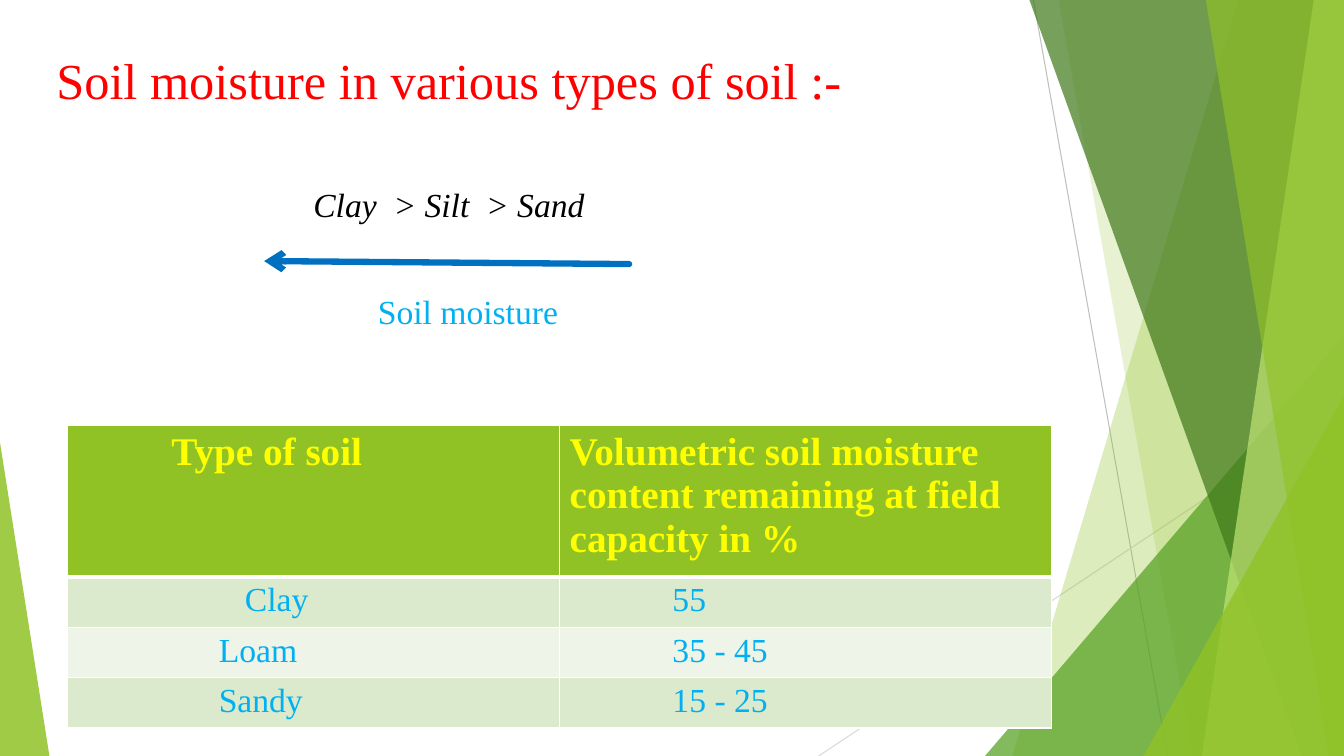
"""Build the slide on soil moisture in various types of soil."""
from lxml import etree
from pptx import Presentation
from pptx.dml.color import RGBColor
from pptx.enum.shapes import MSO_CONNECTOR
from pptx.oxml.ns import qn
from pptx.util import Inches, Pt

STRAIGHT = MSO_CONNECTOR.STRAIGHT
WHITE = RGBColor(0xFF, 0xFF, 0xFF)
BLACK = RGBColor(0, 0, 0)
RED = RGBColor(0xFF, 0, 0)
YELLOW = RGBColor(0xFF, 0xFF, 0)
SKY = RGBColor(0, 0xB0, 0xF0)
BLUE = RGBColor(0, 0x70, 0xC0)
LIME = RGBColor(0x90, 0xC2, 0x26)
PALE_LIME = RGBColor(0xC0, 0xE4, 0x74)
GREEN = RGBColor(0x54, 0xA0, 0x21)
DARK_GREEN = RGBColor(0x3F, 0x78, 0x19)
BAND_DARK = RGBColor(0xDB, 0xE9, 0xCD)
BAND_LIGHT = RGBColor(0xEE, 0xF4, 0xE8)
GREY = RGBColor(0xBF, 0xBF, 0xBF)
LIGHT_GREY = RGBColor(0xD9, 0xD9, 0xD9)

WIDTH, HEIGHT = 13.33, 7.5
FONT = "Times New Roman"

BACK_LINES = [
    ((10.25, 0), (11.58, HEIGHT), GREY, 0.75),
    ((WIDTH, 4.03), (8.12, HEIGHT), LIGHT_GREY, 0.75),
]
MOISTURE_ARROW = ((6.24, 2.62), (2.62, 2.59), BLUE, 4.5)

RIGHT_TOP, RIGHT_BOTTOM = (WIDTH, 0), (WIDTH, HEIGHT)
FACETS = [
    ([(12.28, 0), RIGHT_TOP, RIGHT_BOTTOM, (10.04, HEIGHT)], LIME, 30),
    ([(10.5, 0), RIGHT_TOP, RIGHT_BOTTOM, (11.83, HEIGHT)], LIME, 20),
    ([(WIDTH, 3.33), RIGHT_BOTTOM, (9.77, HEIGHT)], GREEN, 72),
    ([(10.21, 0), RIGHT_TOP, RIGHT_BOTTOM, (12.91, HEIGHT)], DARK_GREEN, 70),
    ([(13.03, 0), RIGHT_TOP, RIGHT_BOTTOM, (11.92, HEIGHT)], PALE_LIME, 70),
    ([(11.96, 0), RIGHT_TOP, RIGHT_BOTTOM, (13.18, HEIGHT)], LIME, 65),
    ([(WIDTH, 3.93), RIGHT_BOTTOM, (11.34, HEIGHT)], LIME, 80),
    ([(0, 4.39), (0.49, HEIGHT), (0, HEIGHT)], LIME, 85),
]

TEXTS = [
    ("Soil moisture in various types of soil :-", (0.46, 0.44, 9.78, 0.71),
     {"size": Pt(36)}, RED),
    ("Clay  > Silt  > Sand", (3.01, 1.78, 5.97, 0.5),
     {"size": Pt(24), "italic": True}, BLACK),
    ("Soil moisture", (3.65, 2.84, 2.9, 0.5), {"size": Pt(24)}, SKY),
]

SOIL_ROWS = [
    ("Type of soil", "Volumetric soil moisture content remaining at field capacity in %"),
    ("Clay", "55"),
    ("Loam", "35 - 45"),
    ("Sandy", "15 - 25"),
]
INDENTS = [(1.03, 0.1), (1.76, 1.12), (1.5, 1.12), (1.5, 1.12)]
TABLE_LEFT, TABLE_TOP, COLUMN_WIDTH = 0.67, 4.22, 4.88
HEADER_HEIGHT, ROW_HEIGHT = 1.48, 0.5
HEADER_FORMAT = {"size": Pt(28), "bold": True}
BODY_FORMAT = {"size": Pt(24), "bold": False}


def write(frame, text, values, color):
    paragraph = frame.paragraphs[0]
    run = paragraph.add_run()
    run.text = text
    for key, value in {"name": FONT, **values}.items():
        setattr(run.font, key, value)
    run.font.color.rgb = color


def draw_line(shapes, start, end, color, weight):
    line = shapes.add_connector(STRAIGHT, *map(Inches, start + end))
    line.line.color.rgb = color
    line.line.width = Pt(weight)
    etree.SubElement(line._element.spPr, qn("a:effectLst"))
    return line


def draw_facet(shapes, points, color, opacity):
    corners = [(Inches(x), Inches(y)) for x, y in points]
    builder = shapes.build_freeform(*corners[0], scale=1.0)
    builder.add_line_segments(corners[1:], close=True)
    facet = builder.convert_to_shape()
    facet.shadow.inherit = False
    facet.fill.solid()
    facet.fill.fore_color.rgb = color
    facet.line.fill.background()
    tint = facet._element.spPr.find(qn("a:solidFill"))[0]
    etree.SubElement(tint, qn("a:alpha"), val=str(opacity * 1000))


def add_borders(cell, weights):
    properties = cell._tc.get_or_add_tcPr()
    for index, (side, weight) in enumerate(weights.items()):
        border = etree.Element(qn(f"a:{side}"), w=str(Pt(weight)))
        fill = etree.SubElement(border, qn("a:solidFill"))
        etree.SubElement(fill, qn("a:srgbClr"), val=str(WHITE))
        properties.insert(index, border)


def draw_table(shapes):
    heights = [HEADER_HEIGHT] + [ROW_HEIGHT] * (len(SOIL_ROWS) - 1)
    table = shapes.add_table(
        len(SOIL_ROWS), 2, Inches(TABLE_LEFT), Inches(TABLE_TOP),
        Inches(2 * COLUMN_WIDTH), Inches(sum(heights))).table
    for column in table.columns:
        column.width = Inches(COLUMN_WIDTH)
    for r, (texts, indents) in enumerate(zip(SOIL_ROWS, INDENTS)):
        table.rows[r].height = Inches(heights[r])
        header = r == 0
        band = LIME if header else (BAND_LIGHT, BAND_DARK)[r % 2]
        for c, (text, indent) in enumerate(zip(texts, indents)):
            cell = table.cell(r, c)
            cell.margin_left = Inches(indent)
            cell.fill.solid()
            cell.fill.fore_color.rgb = band
            write(cell.text_frame, text, HEADER_FORMAT if header else BODY_FORMAT,
                  YELLOW if header else SKY)
            add_borders(cell, {"lnL": 1, "lnR": 1, "lnT": 3 if r == 1 else 1,
                               "lnB": 3 if header else 1})


def main():
    deck = Presentation()
    deck.slide_width, deck.slide_height = Inches(WIDTH), Inches(HEIGHT)
    shapes = deck.slides.add_slide(deck.slide_layouts[6]).shapes
    for back_line in BACK_LINES:
        draw_line(shapes, *back_line)
    for facet in FACETS:
        draw_facet(shapes, *facet)
    for text, place, values, color in TEXTS:
        frame = shapes.add_textbox(*map(Inches, place)).text_frame
        frame.word_wrap = True
        write(frame, text, values, color)
    arrow = draw_line(shapes, *MOISTURE_ARROW)
    stroke = arrow.line._get_or_add_ln()
    stroke.set("cap", "rnd")
    etree.SubElement(stroke, qn("a:tailEnd"), type="arrow")
    draw_table(shapes)
    deck.save("out.pptx")


if __name__ == "__main__":
    main()
